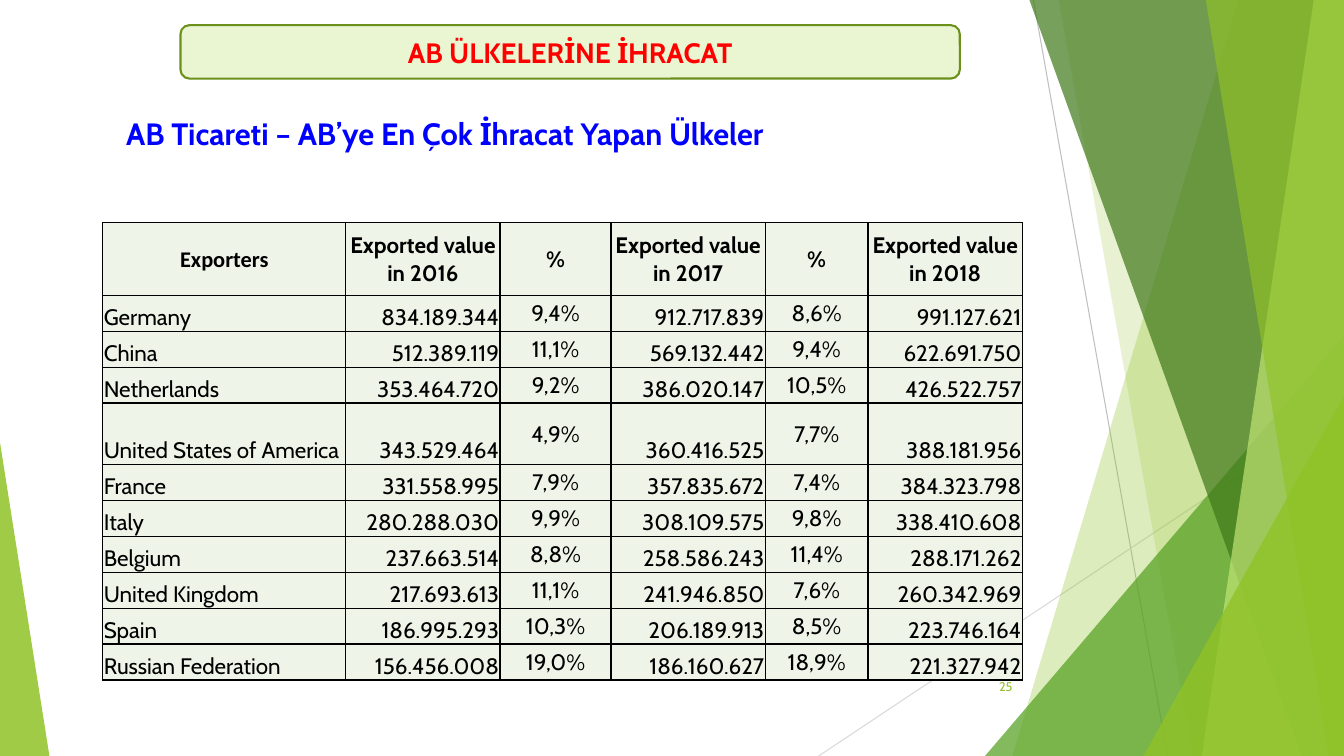
from dataclasses import dataclass
from lxml.etree import SubElement as Sub
from pptx import Presentation
from pptx.dml.color import RGBColor as RGB
from pptx.enum.shapes import MSO_CONNECTOR as Conn, MSO_SHAPE as Shape
from pptx.enum.text import MSO_ANCHOR as Anchor, MSO_AUTO_SIZE as Auto, PP_ALIGN as Align
from pptx.oxml.ns import qn
from pptx.util import Inches, Pt


@dataclass(frozen=True)
class Theme:
    font: str = "Cabin"
    alt: str = "Calibri"
    lime: str = "90C226"
    leaf: str = "54A021"
    pine: str = "3F7819"
    pale: str = "C0E474"
    rays: tuple = ("BFBFBF", "D9D9D9")
    mint: str = "EAF6D1"
    edge: str = "6B901C"
    cell: str = "EEF4E8"
    ink: str = "000000"
    red: str = "FF0000"
    blue: str = "0000FF"
    head: int = 22
    bar: int = 20
    body: int = 16
    page: int = 9


@dataclass(frozen=True)
class Box:
    x: float
    y: float
    w: float
    h: float

    def inches(self):
        return [Inches(v) for v in (self.x, self.y, self.w, self.h)]


T = Theme()
WIDE, HIGH = 13.33, 7.5
COLS = [2.41, 1.53, 1.1, 1.53, 1.02, 1.53]
TALL = {"Exporters": 0.72, "United States of America": 0.61}
HEAD = ["Exporters", "Exported value in 2016", "%", "Exported value in 2017", "%",
        "Exported value in 2018"]
ROWS = [
    ["Germany", "834.189.344", "9,4%", "912.717.839", "8,6%", "991.127.621"],
    ["China", "512.389.119", "11,1%", "569.132.442", "9,4%", "622.691.750"],
    ["Netherlands", "353.464.720", "9,2%", "386.020.147", "10,5%", "426.522.757"],
    ["United States of America", "343.529.464", "4,9%", "360.416.525", "7,7%", "388.181.956"],
    ["France", "331.558.995", "7,9%", "357.835.672", "7,4%", "384.323.798"],
    ["Italy", "280.288.030", "9,9%", "308.109.575", "9,8%", "338.410.608"],
    ["Belgium", "237.663.514", "8,8%", "258.586.243", "11,4%", "288.171.262"],
    ["United Kingdom", "217.693.613", "11,1%", "241.946.850", "7,6%", "260.342.969"],
    ["Spain", "186.995.293", "10,3%", "206.189.913", "8,5%", "223.746.164"],
    ["Russian Federation", "156.456.008", "19,0%", "186.160.627", "18,9%", "221.327.942"],
]


def write(frame, text, size, color, align, bold=False, font=T.font):
    frame.word_wrap = True
    par = frame.paragraphs[0]
    par.text = text
    par.alignment = align
    par.font.size = Pt(size)
    par.font.name = font
    par.font.bold = bold
    par.font.color.rgb = RGB.from_string(color)


def paint(shape, color, alpha=100):
    shape.shadow.inherit = False
    shape.fill.solid()
    shape.fill.fore_color.rgb = RGB.from_string(color)
    shape.line.fill.background()
    if alpha < 100:
        tint = shape.fill._xPr.find(qn("a:solidFill"))[0]
        Sub(tint, qn("a:alpha"), val=str(alpha * 1000))


def ray(slide, start, end, color):
    line = slide.shapes.add_connector(Conn.STRAIGHT, *map(Inches, start + end))
    line.line.color.rgb = RGB.from_string(color)
    line.line.width = Pt(0.75)
    Sub(line._element.spPr, qn("a:effectLst"))


def band(slide, box, top, base, color, alpha):
    right, low = Inches(box.x + box.w), Inches(box.y + box.h)
    high = Inches(box.y)
    pen = slide.shapes.build_freeform(Inches(box.x + top), high)
    pen.add_line_segments([(right, high), (right, low), (Inches(box.x + base), low)])
    paint(pen.convert_to_shape(), color, alpha)


def wedge(slide, box, wide, high, tip, color, alpha):
    left = box.x + tip * (box.w - wide)
    place = Box(left, box.y + box.h - high, wide, high)
    shape = slide.shapes.add_shape(Shape.ISOSCELES_TRIANGLE, *place.inches())
    shape.adjustments[0] = tip
    paint(shape, color, alpha)


def decor(slide, box):
    right, low = box.x + box.w, box.y + box.h
    ray(slide, (box.x + 10.25, box.y), (box.x + 11.58, low), T.rays[0])
    ray(slide, (right, box.y + 4.03), (box.x + 8.12, low), T.rays[1])
    band(slide, box, 12.28, 10.04, T.lime, 30)
    band(slide, box, 10.5, 11.83, T.lime, 20)
    wedge(slide, box, 3.56, 4.17, 1, T.leaf, 72)
    band(slide, box, 10.21, 12.91, T.pine, 70)
    band(slide, box, 13.03, 11.92, T.pale, 70)
    band(slide, box, 11.96, 13.18, T.lime, 65)
    wedge(slide, box, 1.99, 3.57, 1, T.lime, 80)
    wedge(slide, box, 0.49, 3.11, 0, T.lime, 85)


def banner(slide, box):
    bar = slide.shapes.add_shape(Shape.ROUNDED_RECTANGLE, *box.inches())
    paint(bar, T.mint)
    bar.line.color.rgb = RGB.from_string(T.edge)
    bar.line.width = Pt(1.5)
    bar.text_frame.vertical_anchor = Anchor.MIDDLE
    write(bar.text_frame, "AB ÜLKELERİNE İHRACAT", T.bar, T.red, Align.CENTER, True)


def title(slide, box):
    head = slide.shapes.title
    head.left, head.top, head.width, head.height = box.inches()
    head.text_frame.vertical_anchor = Anchor.TOP
    head.text_frame.auto_size = Auto.SHAPE_TO_FIT_TEXT
    write(head.text_frame, "AB Ticareti – AB’ye En Çok İhracat Yapan Ülkeler",
          T.head, T.blue, Align.JUSTIFY, True)


def number(slide, box):
    frame = slide.shapes.add_textbox(*box.inches()).text_frame
    frame.vertical_anchor = Anchor.MIDDLE
    write(frame, "25", T.page, T.lime, Align.RIGHT)


def border(cell):
    props = cell._tc.get_or_add_tcPr()
    for side in "LRTB":
        line = Sub(props, qn("a:ln" + side), w=str(Pt(1)))
        Sub(Sub(line, qn("a:solidFill")), qn("a:srgbClr"), val=T.ink)


def style(cell, text, top, col):
    border(cell)
    cell.fill.solid()
    cell.fill.fore_color.rgb = RGB.from_string(T.cell)
    cell.margin_left = cell.margin_right = cell.margin_top = Inches(0.01)
    cell.margin_bottom = 0
    mid = top or text.endswith("%")
    cell.vertical_anchor = Anchor.MIDDLE if mid else Anchor.BOTTOM
    align = Align.CENTER if mid else Align.RIGHT if col else Align.LEFT
    font = T.alt if top and col == 0 else T.font
    write(cell.text_frame, text, T.body, T.ink, align, top, font)


def exports(slide, box):
    data = [HEAD] + ROWS
    grid = slide.shapes.add_table(len(data), len(COLS), *box.inches()).table
    for col, wide in zip(grid.columns, COLS):
        col.width = Inches(wide)
    even = (box.h - sum(TALL.values())) / (len(data) - len(TALL))
    for r, texts in enumerate(data):
        grid.rows[r].height = Inches(TALL.get(texts[0], even))
        for c, text in enumerate(texts):
            style(grid.cell(r, c), text, r == 0, c)


def main():
    deck = Presentation()
    deck.slide_width, deck.slide_height = Inches(WIDE), Inches(HIGH)
    slide = deck.slides.add_slide(deck.slide_layouts[5])
    decor(slide, Box(0, 0, WIDE, HIGH))
    title(slide, Box(1.15, 1.09, 8.07, 0.47))
    exports(slide, Box(1.02, 2.21, 9.12, 4.54))
    number(slide, Box(9.39, 6.61, 0.75, 0.4))
    banner(slide, Box(1.79, 0.25, 7.73, 0.53))
    deck.save("out.pptx")


if __name__ == "__main__":
    main()
